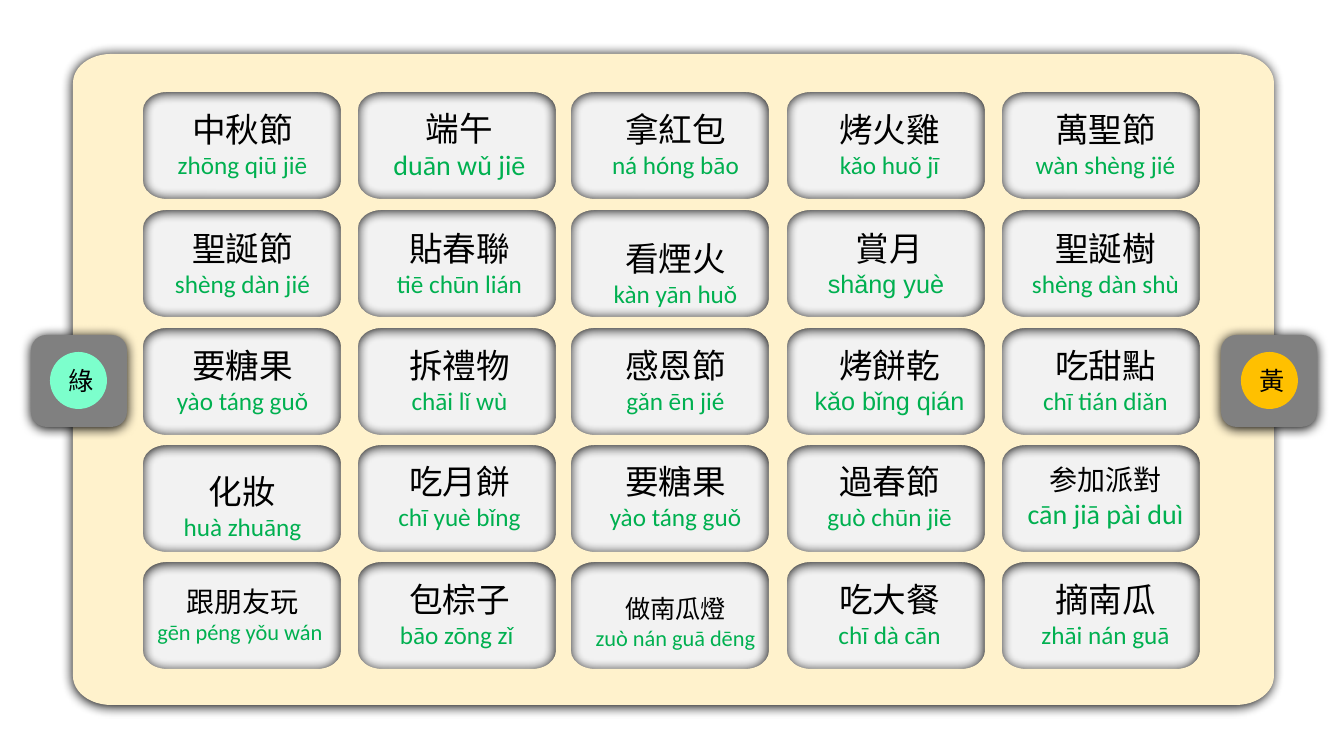
from math import cos, pi, sin

from lxml.etree import Element, SubElement
from pptx import Presentation
from pptx.dml.color import RGBColor
from pptx.enum.shapes import MSO_SHAPE as SHAPE
from pptx.enum.text import MSO_ANCHOR as ANCHOR, PP_ALIGN as ALIGN
from pptx.oxml.ns import qn
from pptx.util import Pt

BLACK = RGBColor(0x00, 0x00, 0x00)
GREEN = RGBColor(0x00, 0xB0, 0x50)
CARD_FILL = RGBColor(0xF2, 0xF2, 0xF2)
CARD_LINE = RGBColor(0xD9, 0xD9, 0xD9)
CREAM = RGBColor(0xFF, 0xF2, 0xCC)
GRAY = RGBColor(0x80, 0x80, 0x80)
MINT = RGBColor(0x7C, 0xFF, 0xCC)
AMBER = RGBColor(0xFF, 0xC0, 0x00)

# Content: five rows of (word, pinyin)
WORDS = [
    [("中秋節", "zhōng qiū jiē"), ("端午", "duān wǔ jiē"), ("拿紅包", "ná hóng bāo"),
     ("烤火雞", "kǎo huǒ jī"), ("萬聖節", "wàn shèng jié")],
    [("聖誕節", "shèng dàn jié"), ("貼春聯", "tiē chūn lián"), ("看煙火", "kàn yān huǒ"),
     ("賞月", "shǎng yuè "), ("聖誕樹", "shèng dàn shù")],
    [("要糖果", "yào táng guǒ"), ("拆禮物", "chāi lǐ wù"), ("感恩節", "gǎn ēn jié"),
     ("烤餅乾", "kǎo bǐng qián"), ("吃甜點", "chī tián diǎn")],
    [("化妝", "huà zhuāng"), ("吃月餅", "chī yuè bǐng"), ("要糖果", "yào táng guǒ"),
     ("過春節", "guò chūn jiē"), ("参加派對", "cān jiā pài duì")],
    [("跟朋友玩", "gēn péng yǒu wán "), ("包棕子", "bāo zōng zǐ "),
     ("做南瓜燈", "zuò nán guā dēng"), ("吃大餐", "chī dà cān"), ("摘南瓜", "zhāi nán guā")],
]
# Cards that differ from the usual 24 / 18 pt in Calibri
SIZES = {"端午": (24, 20), "参加派對": (20, 20), "跟朋友玩": (20, 16), "做南瓜燈": (18, 16)}
LOOSE = {"看煙火", "化妝", "做南瓜燈"}
WORD_FONT = {"烤餅乾": "Arial"}
PINYIN_FONT = {"賞月": "Arial", "烤餅乾": "Arial"}
SPLIT_RUNS = {"参加派對": [("参", "Noto Sans CJK SC"), ("加派對", "Calibri")]}

# Layout in px
PX = 914400 / 100.8
CARD_X, CARD_Y = (137, 354, 570, 784, 1000), (88, 207, 324, 440, 558)
CARD_W, CARD_H = 211, 113
HOLE_X, HOLE_Y = (143, 358, 571, 787, 1002), (92, 210, 328, 445, 562)
HOLE_W, HOLE_H = 198, 107
FRAME = (73, 54, 1201, 651)
FRAME_RADII, HOLE_RADII = (38, 29), (24, 18)
TABS = [(1221, 335), (31, 335)]
TAB_W, TAB_H = 96, 92
DOTS = [("綠", 50, MINT), ("黃", 1241, AMBER)]
DOT_Y, DOT_D = 352, 57
QUARTER_TURN = 90 * 60000


def emu(*lengths):
    return [round(v * PX) for v in lengths]


def paint(sp, fill, line=None):
    sp.shadow.inherit = False
    sp.fill.solid()
    sp.fill.fore_color.rgb = fill
    if line is None:
        sp.line.fill.background()
    else:
        sp.line.color.rgb = line
        sp.line.width = Pt(0.75)


def add_shadow(sp):
    effects = sp._element.spPr.find(qn("a:effectLst"))
    shadow = SubElement(effects, qn("a:outerShdw"), blurRad=str(Pt(8.5)),
                        dist=str(Pt(1)), dir=str(QUARTER_TURN), algn="t", rotWithShape="0")
    SubElement(shadow, qn("a:srgbClr"), val=str(BLACK))


def add_run(p, text, size, color, font="Calibri"):
    r = p.add_run()
    r.text = text
    r.font.size = Pt(size)
    r.font.name = font
    r.font.color.rgb = color


def corner_ends(x, y, w, h, rx, ry):
    """Eight points, clockwise, where each corner of a box starts and ends."""
    centres = [(x + w - rx, y + h - ry), (x + rx, y + h - ry),
               (x + rx, y + ry), (x + w - rx, y + ry)]
    return [emu(cx + rx * cos(a * pi / 2), cy + ry * sin(a * pi / 2))
            for quarter, (cx, cy) in enumerate(centres)
            for a in (quarter, quarter + 1)]


def round_corners(sp):
    """Turn the corner segments, every other one of seven, into arcs."""
    for i, segment in enumerate(list(sp._element.iter(qn("a:lnTo")))):
        box, side = divmod(i, 7)
        if side % 2 == 0:
            w, h = emu(*(HOLE_RADII if box else FRAME_RADII))
            arc = Element(qn("a:arcTo"), wR=str(w), hR=str(h),
                          stAng=str(side // 2 * QUARTER_TURN), swAng=str(QUARTER_TURN))
            segment.getparent().replace(segment, arc)


prs = Presentation()
prs.slide_width, prs.slide_height = emu(1344, 756)
s = prs.slides.add_slide(prs.slide_layouts[6])

# Word cards
for y, row in zip(CARD_Y, WORDS):
    for x, (word, pinyin) in zip(CARD_X, row):
        sp = s.shapes.add_shape(SHAPE.RECTANGLE, *emu(x, y, CARD_W, CARD_H))
        paint(sp, CARD_FILL, CARD_LINE)
        word_size, pinyin_size = SIZES.get(word, (24, 18))
        tf = sp.text_frame
        tf.vertical_anchor = ANCHOR.MIDDLE
        p = tf.paragraphs[0]
        p.alignment = ALIGN.CENTER
        if word in LOOSE:
            p.line_spacing = 1.5
        for text, font in SPLIT_RUNS.get(word, [(word, WORD_FONT.get(word, "Calibri"))]):
            add_run(p, text, word_size, BLACK, font)
        p = tf.add_paragraph()
        p.alignment = ALIGN.CENTER
        add_run(p, pinyin, pinyin_size, GREEN, PINYIN_FONT.get(word, "Calibri"))

# Cream frame with a rounded window over each card
outline = corner_ends(*FRAME, *FRAME_RADII)
builder = s.shapes.build_freeform(*outline[0], scale=1.0)
builder.add_line_segments(outline[1:], close=True)
for y in HOLE_Y:
    for x in HOLE_X:
        window = corner_ends(x, y, HOLE_W, HOLE_H, *HOLE_RADII)
        builder.move_to(*window[0])
        builder.add_line_segments(window[1:], close=True)
frame = builder.convert_to_shape()
round_corners(frame)
paint(frame, CREAM)
add_shadow(frame)

# Side tabs
for x, y in TABS:
    sp = s.shapes.add_shape(SHAPE.ROUNDED_RECTANGLE, *emu(x, y, TAB_W, TAB_H))
    paint(sp, GRAY)
    add_shadow(sp)

# Colour dots
for label, x, color in DOTS:
    sp = s.shapes.add_shape(SHAPE.OVAL, *emu(x, DOT_Y, DOT_D, DOT_D))
    paint(sp, color)
    sp.text_frame.vertical_anchor = ANCHOR.MIDDLE
    p = sp.text_frame.paragraphs[0]
    p.alignment = ALIGN.CENTER
    add_run(p, label, 18, BLACK)

prs.save("out.pptx")
